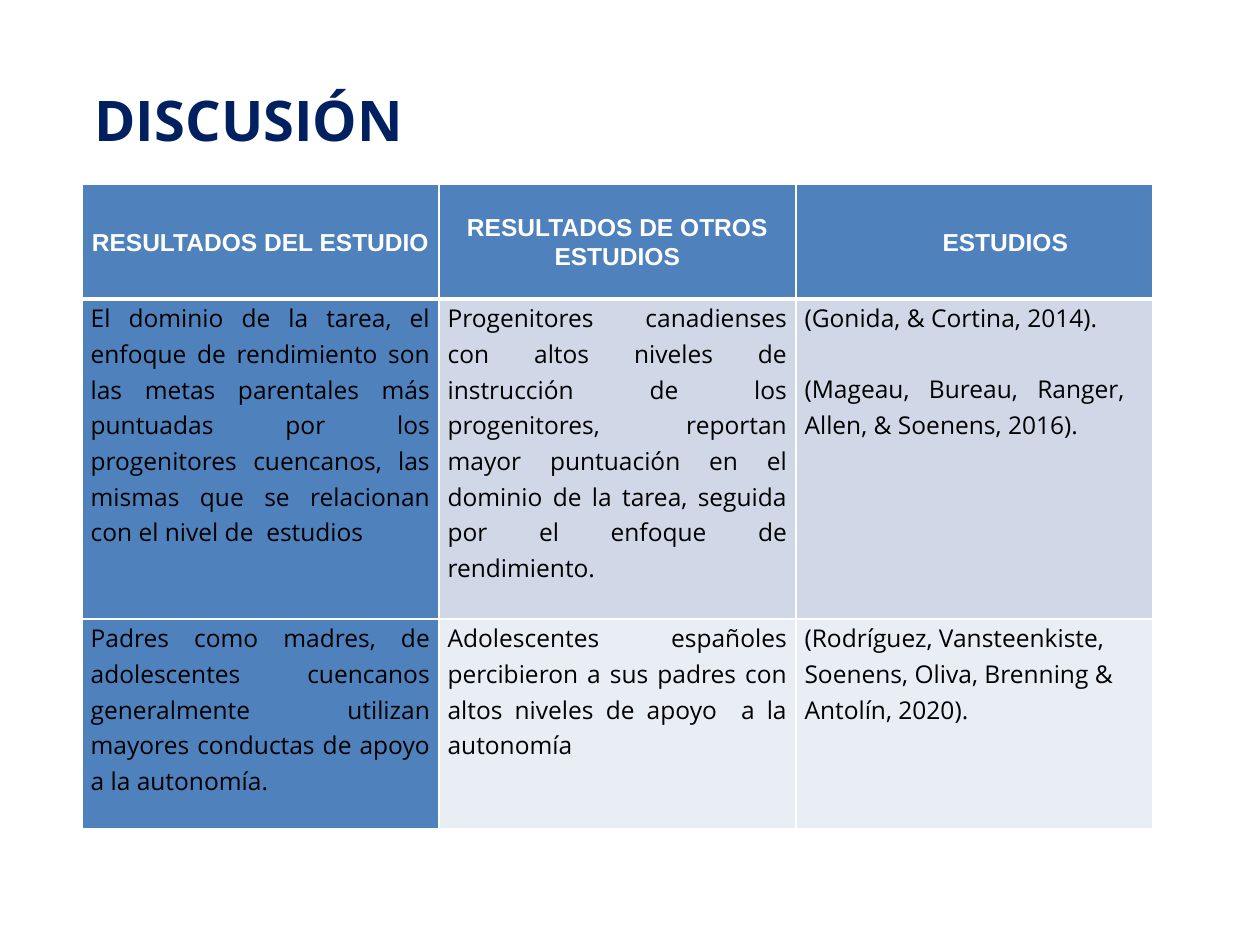
from dataclasses import dataclass

from lxml import etree
from pptx import Presentation
from pptx.dml.color import RGBColor
from pptx.enum.text import MSO_ANCHOR, PP_ALIGN
from pptx.oxml.ns import qn
from pptx.util import Pt

LEFT, CENTER, JUSTIFY = PP_ALIGN.LEFT, PP_ALIGN.CENTER, PP_ALIGN.JUSTIFY
TOP, MIDDLE = MSO_ANCHOR.TOP, MSO_ANCHOR.MIDDLE
TITLE_ONLY = 5


@dataclass(frozen=True)
class Theme:
    navy: str = "002060"
    blue: str = "4F81BD"
    bands: tuple = ("D0D8E8", "E9EDF4")
    white: str = "FFFFFF"
    black: str = "000000"
    body_font: str = "Open Sans"
    header_font: str = "Arial"
    title_size: int = 32
    table_size: int = 14
    line_spacing: float = 1.07
    study_gap: float = 20.4


THEME = Theme()

HEADINGS = ["RESULTADOS DEL ESTUDIO", "RESULTADOS DE OTROS ESTUDIOS", "ESTUDIOS"]
# Each cell holds its paragraphs
FINDINGS = [
    [
        ["El dominio de la tarea, el enfoque de rendimiento son las metas parentales "
         "más puntuadas por los progenitores cuencanos, las mismas que se relacionan "
         "con el nivel de  estudios"],
        ["Progenitores canadienses con altos niveles de instrucción de los "
         "progenitores, reportan mayor puntuación en el dominio de la tarea, seguida "
         "por el enfoque de rendimiento."],
        ["(Gonida, & Cortina, 2014).",
         "(Mageau, Bureau, Ranger,  Allen, & Soenens, 2016)."],
    ],
    [
        ["Padres como madres, de adolescentes cuencanos generalmente utilizan mayores "
         "conductas de apoyo a la autonomía."],
        ["Adolescentes españoles percibieron a sus padres con altos niveles de apoyo  "
         "a la autonomía"],
        ["(Rodríguez, Vansteenkiste, Soenens, Oliva, Brenning & Antolín, 2020)."],
    ],
]


def write(frame, paragraphs, *, font, size, color, bold=False, align=LEFT,
          line_spacing=None, gap=0, first_indent=0):
    """Fill a text frame with evenly formatted paragraphs."""
    for index, text in enumerate(paragraphs):
        paragraph = frame.paragraphs[0] if index == 0 else frame.add_paragraph()
        paragraph.alignment = align
        if line_spacing:
            paragraph.line_spacing = line_spacing
        if index and gap:
            paragraph.space_before = Pt(gap)
        if first_indent:
            properties = paragraph._p.get_or_add_pPr()
            properties.set("marL", "0")
            properties.set("indent", str(Pt(first_indent)))
        run = paragraph.add_run()
        run.text = text
        run.font.name = font
        run.font.size = Pt(size)
        run.font.bold = bold
        run.font.color.rgb = RGBColor.from_string(color)


def style_cell(cell, fill, anchor, top=1, bottom=1):
    """Set margins, white borders (widths in points) and fill."""
    cell.margin_left = cell.margin_right = Pt(5)
    cell.margin_top = cell.margin_bottom = Pt(0)
    cell.vertical_anchor = anchor
    properties = cell._tc.get_or_add_tcPr()
    for side, width in (("L", 1), ("R", 1), ("T", top), ("B", bottom)):
        border = etree.SubElement(properties, qn(f"a:ln{side}"), w=str(Pt(width)))
        solid = etree.SubElement(border, qn("a:solidFill"))
        etree.SubElement(solid, qn("a:srgbClr"), val=THEME.white)
    cell.fill.solid()
    cell.fill.fore_color.rgb = RGBColor.from_string(fill)


def place_title(slide, left, top, width, height):
    title = slide.shapes.title
    title.left, title.top = Pt(left), Pt(top)
    title.width, title.height = Pt(width), Pt(height)
    title.text_frame.vertical_anchor = MIDDLE
    write(title.text_frame, ["DISCUSIÓN"], font=THEME.body_font,
          size=THEME.title_size, color=THEME.navy, bold=True)


def place_comparison(slide, left, top, width, row_heights):
    table = slide.shapes.add_table(
        len(row_heights), len(HEADINGS), Pt(left), Pt(top), Pt(width),
        Pt(sum(row_heights))).table
    for column in table.columns:
        column.width = Pt(width / len(HEADINGS))
    for row, height in zip(table.rows, row_heights):
        row.height = Pt(height)

    # Header row
    for col, heading in enumerate(HEADINGS):
        cell = table.cell(0, col)
        style_cell(cell, THEME.blue, MIDDLE, bottom=3)
        write(cell.text_frame, [heading], font=THEME.header_font,
              size=THEME.table_size, color=THEME.white, bold=True, align=CENTER,
              line_spacing=THEME.line_spacing,
              first_indent=35.4 if heading == "ESTUDIOS" else 0)

    # Findings, with a solid first column and banded rows
    for row, (findings, band) in enumerate(zip(FINDINGS, THEME.bands), start=1):
        for col, paragraphs in enumerate(findings):
            cell = table.cell(row, col)
            style_cell(cell, THEME.blue if col == 0 else band, TOP,
                       top=3 if row == 1 else 1)
            last_cell = row == len(FINDINGS) and col == len(findings) - 1
            write(cell.text_frame, paragraphs, font=THEME.body_font,
                  size=THEME.table_size, color=THEME.black,
                  align=LEFT if last_cell else JUSTIFY,
                  line_spacing=THEME.line_spacing, gap=THEME.study_gap)


def main():
    deck = Presentation()
    deck.slide_width, deck.slide_height = Pt(720), Pt(540)
    slide = deck.slides.add_slide(deck.slide_layouts[TITLE_ONLY])
    left, width = 46.8, 612
    place_title(slide, left, 10, width, 116)
    place_comparison(slide, left, 105.4, width, [65.5, 183, 120])
    deck.save("out.pptx")


if __name__ == "__main__":
    main()
